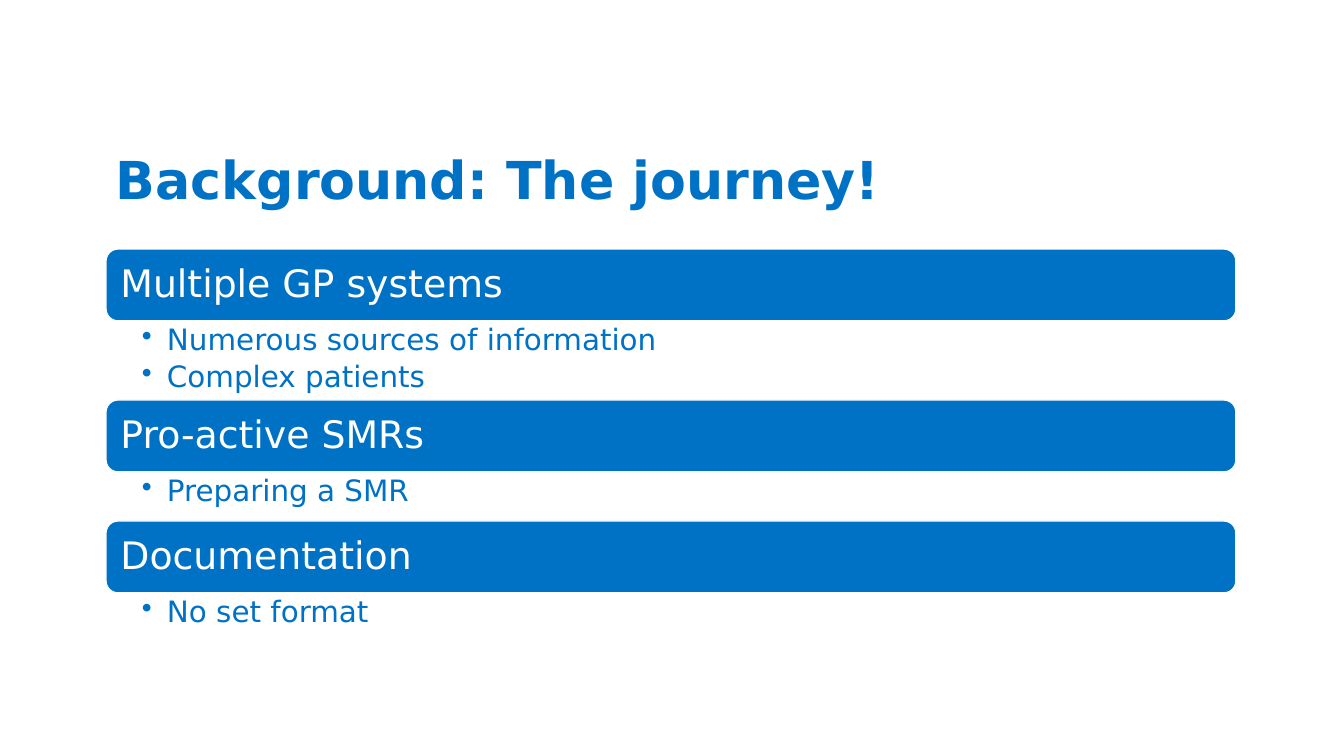
from lxml.etree import SubElement
from pptx import Presentation
from pptx.dml.color import RGBColor
from pptx.enum.shapes import MSO_SHAPE
from pptx.enum.text import MSO_ANCHOR, MSO_AUTO_SIZE, PP_ALIGN
from pptx.oxml.ns import qn
from pptx.util import Pt

TITLE = "Background: The journey!"
SECTIONS = [
    ("Multiple GP systems", ["Numerous sources of information", "Complex patients"], 79),
    ("Pro-active SMRs", ["Preparing a SMR"], 49),
    ("Documentation", ["No set format"], 49),
]
BLUE, WHITE = "0072C6", "FFFFFF"
LEFT, WIDTH = 106, 1130
TITLE_TOP, TITLE_HEIGHT = 112, 104
FIRST_BAR_TOP, BAR_HEIGHT = 249, 72
BULLET_INDENT = 25
FRAME = {"word_wrap": True, "auto_size": MSO_AUTO_SIZE.NONE}
TITLE_FRAME = {**FRAME, "vertical_anchor": MSO_ANCHOR.BOTTOM}
BAR_FRAME = {**FRAME, "vertical_anchor": MSO_ANCHOR.MIDDLE}
BODY_FRAME = {**FRAME, "vertical_anchor": MSO_ANCHOR.TOP}
TITLE_FONT = {"size": Pt(37.3), "bold": True}
BAR_FONT = {"size": Pt(27)}
BODY_FONT = {"size": Pt(21)}


def px(length):
    return round(length * 914400 / 100.8)


def color(value):
    return RGBColor.from_string(value)


def set_all(target, values):
    for name, value in values.items():
        setattr(target, name, value)


def write(shape, lines, frame_format, margins, font_format, font_color, bulleted=False):
    """Fill a shape with formatted paragraphs."""
    frame = shape.text_frame
    frame.text = "\n".join(lines)
    set_all(frame, frame_format)
    sides = ("margin_left", "margin_top", "margin_right", "margin_bottom")
    set_all(frame, dict(zip(sides, map(px, margins))))
    for paragraph in frame.paragraphs:
        set_all(paragraph, {"alignment": PP_ALIGN.LEFT, "line_spacing": 0.9})
        if bulleted:
            paragraph.space_after = Pt(4)
            properties = paragraph._p.get_or_add_pPr()
            properties.set("marL", str(px(BULLET_INDENT)))
            properties.set("indent", str(-px(BULLET_INDENT)))
            SubElement(properties, qn("a:buChar")).set("char", "•")
        set_all(paragraph.font, {"name": "DejaVu Sans", **font_format})
        paragraph.font.color.rgb = color(font_color)


def add_section(slide, heading, points, top, body_height):
    """Add a heading bar with its bullet list below."""
    bar = slide.shapes.add_shape(
        MSO_SHAPE.ROUNDED_RECTANGLE, px(LEFT), px(top), px(WIDTH), px(BAR_HEIGHT))
    bar.shadow.inherit = False
    bar.fill.solid()
    bar.fill.fore_color.rgb = color(BLUE)
    bar.line.color.rgb = color(WHITE)
    bar.line.width = Pt(1)
    write(bar, [heading], BAR_FRAME, (11, 11, 11, 11), BAR_FONT, WHITE)
    body = slide.shapes.add_textbox(
        px(LEFT), px(top + BAR_HEIGHT), px(WIDTH), px(body_height))
    write(body, points, BODY_FRAME, (36, 4, 21, 4), BODY_FONT, BLUE, bulleted=True)


def main():
    presentation = Presentation()
    set_all(presentation, {"slide_width": px(1344), "slide_height": px(756)})
    slide = presentation.slides.add_slide(presentation.slide_layouts[5])
    title = slide.shapes.title
    set_all(title, {"left": px(LEFT), "top": px(TITLE_TOP),
                    "width": px(WIDTH), "height": px(TITLE_HEIGHT)})
    write(title, [TITLE], TITLE_FRAME, (10, 5, 10, 5), TITLE_FONT, BLUE)
    top = FIRST_BAR_TOP
    for heading, points, body_height in SECTIONS:
        add_section(slide, heading, points, top, body_height)
        top += BAR_HEIGHT + body_height
    presentation.save("out.pptx")


if __name__ == "__main__":
    main()
